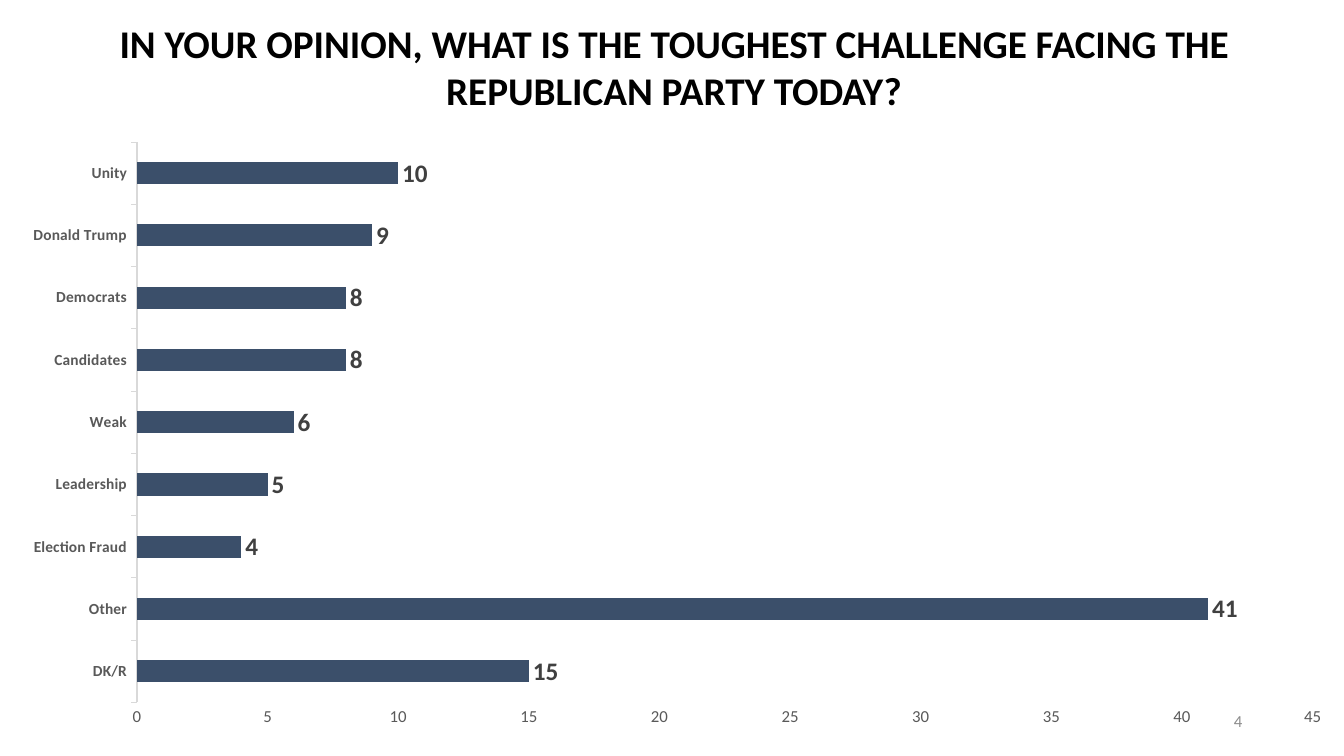
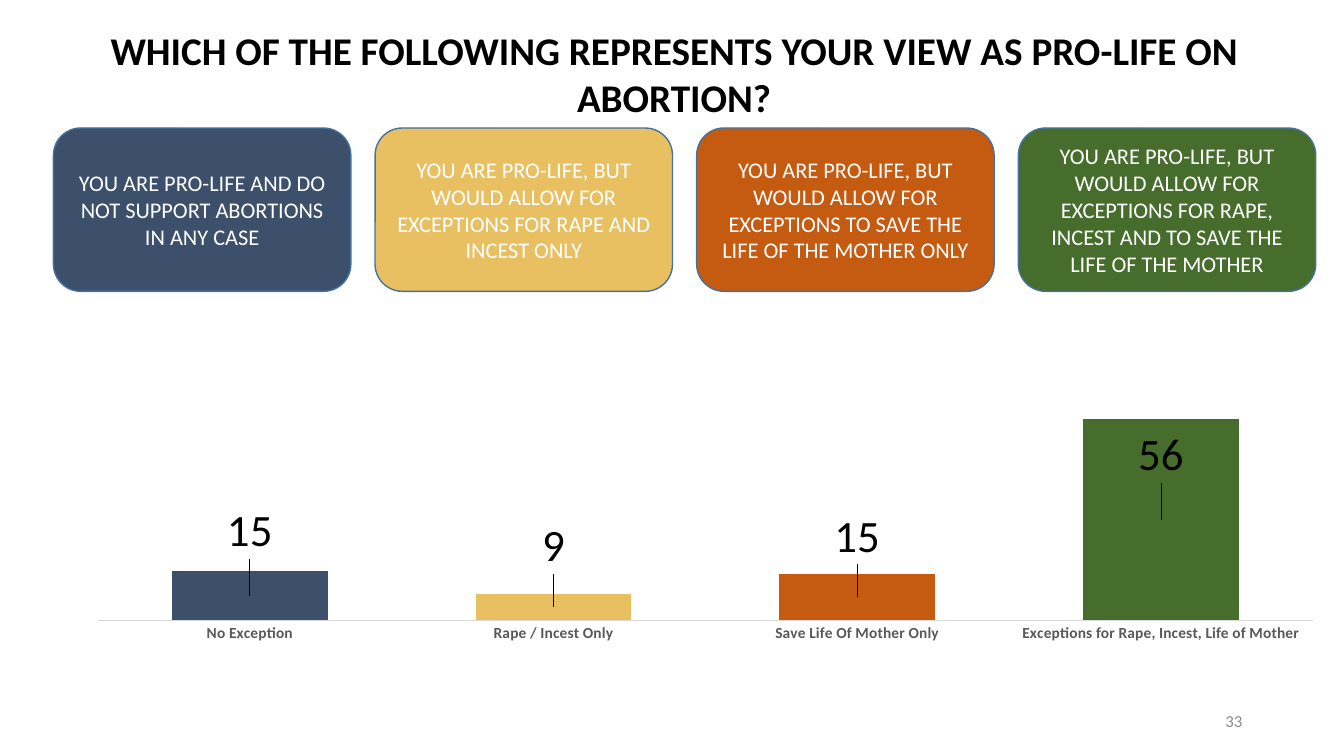
from lxml import etree
from pptx import Presentation
from pptx.chart.data import CategoryChartData
from pptx.dml.color import RGBColor
from pptx.enum import chart as ch, shapes, text
from pptx.oxml.ns import qn
from pptx.util import Inches, Pt

FONT = "Calibri"
BLACK, WHITE, GREY, DARK_GREY = "000000", "FFFFFF", "595959", "404040"
PAGE_GREY, AXIS_GREY, BOX_LINE = "8C8C8C", "D9D9D9", "43739E"

CHALLENGE_TITLE = ("IN YOUR OPINION, WHAT IS THE TOUGHEST CHALLENGE FACING "
                   "THE REPUBLICAN PARTY TODAY?")
CHALLENGE_BAR = "3B4F6A"
CHALLENGES = [  # bottom bar first
    ("DK/R", 15), ("Other", 41), ("Election Fraud", 4), ("Leadership", 5),
    ("Weak", 6), ("Candidates", 8), ("Democrats", 8), ("Donald Trump", 9),
    ("Unity", 10),
]

VIEW_TITLE = "WHICH OF THE FOLLOWING REPRESENTS YOUR VIEW AS PRO-LIFE ON ABORTION?"
VIEWS = [  # category, bar height, label shown, label shift, colour, statement
    ("No Exception", 15, "15", -0.16, "3C4F6B",
     "YOU ARE PRO-LIFE AND DO NOT SUPPORT ABORTIONS IN ANY CASE"),
    ("Rape / Incest Only", 8, "9", -0.15, "E8C062",
     "YOU ARE PRO-LIFE, BUT WOULD ALLOW FOR EXCEPTIONS FOR RAPE AND INCEST ONLY"),
    ("Save Life Of Mother Only", 14, "15", -0.15, "C55A11",
     "YOU ARE PRO-LIFE, BUT WOULD ALLOW FOR EXCEPTIONS TO SAVE THE LIFE OF "
     "THE MOTHER ONLY"),
    ("Exceptions for Rape, Incest, Life of Mother", 61, "56", -0.16, "466D2C",
     "YOU ARE PRO-LIFE, BUT WOULD ALLOW FOR EXCEPTIONS FOR RAPE, INCEST AND "
     "TO SAVE THE LIFE OF THE MOTHER"),
]
BOX_LEFT, BOX_TOP, BOX_WIDTH, BOX_HEIGHT, BOX_STEP = 0.53, 1.27, 2.95, 1.62, 3.19


def rgb(colour):
    return RGBColor.from_string(colour)


def paint(fill, colour):
    fill.solid()
    fill.fore_color.rgb = rgb(colour)


def style_font(font, size, colour, bold=False):
    font.name, font.size, font.bold = FONT, Pt(size), bold
    font.color.rgb = rgb(colour)


def write(shape, words, size, colour, align, anchor, bold=False):
    frame = shape.text_frame
    frame.word_wrap = True
    frame.vertical_anchor = anchor
    para = frame.paragraphs[0]
    para.text = words
    para.alignment = align
    style_font(para.font, size, colour, bold)


def add_page(deck, title, title_top, number):
    """Add a blank slide with the shared title and page number."""
    page = deck.slides.add_slide(deck.slide_layouts[6])
    box = page.shapes.add_textbox(Inches(0.04), Inches(title_top),
                                  Inches(13.29), Inches(1.04))
    write(box, title, 28, BLACK, text.PP_ALIGN.CENTER, text.MSO_ANCHOR.TOP, True)
    box = page.shapes.add_textbox(Inches(9.42), Inches(6.95), Inches(3), Inches(0.4))
    write(box, number, 12, PAGE_GREY, text.PP_ALIGN.RIGHT, text.MSO_ANCHOR.MIDDLE)
    return page


def make_layout(**settings):
    """Build a chart layout element from its manual settings."""
    layout = etree.Element(qn("c:layout"))
    manual = etree.SubElement(layout, qn("c:manualLayout"))
    for name, value in settings.items():
        etree.SubElement(manual, qn(f"c:{name}")).set("val", str(value))
    return layout


def set_plot_area(chart, left, top, width, height):
    area = chart.element.find(".//" + qn("c:plotArea"))
    for old in area.findall(qn("c:layout")):
        area.remove(old)
    area.insert(0, make_layout(layoutTarget="inner", xMode="edge", yMode="edge",
                               x=left, y=top, w=width, h=height))


def add_bars(page, kind, place, plot_area, rows, gap, colour, top_value):
    """Add a one-series bar chart; rows are (category, value) pairs."""
    data = CategoryChartData()
    data.categories = [name for name, _ in rows]
    data.add_series("Series 1", [value for _, value in rows])
    chart = page.shapes.add_chart(kind, *map(Inches, place), data).chart
    chart.has_title = chart.has_legend = False
    style_font(chart.font, 10, BLACK)
    set_plot_area(chart, *plot_area)

    plot = chart.plots[0]
    plot.vary_by_categories = False
    plot.gap_width = gap
    paint(plot.series[0].format.fill, colour)

    names, values = chart.category_axis, chart.value_axis
    style_font(names.tick_labels.font, 11, GREY, True)
    names.format.line.color.rgb = rgb(AXIS_GREY)
    names.format.line.width = Pt(0.75)
    names.major_tick_mark = values.major_tick_mark = ch.XL_TICK_MARK.NONE
    values.has_major_gridlines = False
    values.minimum_scale, values.maximum_scale = 0, top_value
    return chart


def show_values(series, size, colour, position, bold=False):
    labels = series.data_labels
    labels.show_value = True
    labels.position = position
    style_font(labels.font, size, colour, bold)


def add_challenge_page(deck):
    page = add_page(deck, CHALLENGE_TITLE, 0.14, "4")
    chart = add_bars(page, ch.XL_CHART_TYPE.BAR_CLUSTERED, (0, 1.3, 13.19, 6.11),
                     (0.103, 0.018, 0.884, 0.91), CHALLENGES, 182,
                     CHALLENGE_BAR, 45)
    chart.category_axis.major_tick_mark = ch.XL_TICK_MARK.OUTSIDE
    values = chart.value_axis
    values.major_unit = 5
    values.format.line.fill.background()
    style_font(values.tick_labels.font, 12, GREY)
    show_values(chart.plots[0].series[0], 18, DARK_GREY,
                ch.XL_LABEL_POSITION.OUTSIDE_END, True)


def add_view_page(deck):
    page = add_page(deck, VIEW_TITLE, 0.21, "33")
    chart = add_bars(page, ch.XL_CHART_TYPE.COLUMN_STACKED, (0, 2.73, 13.14, 3.98),
                     (0.074, 0.038, 0.917, 0.822), [view[:2] for view in VIEWS],
                     95, VIEWS[0][4], 100)
    chart.value_axis.visible = False
    chart.plots[0].overlap = 100
    series = chart.plots[0].series[0]
    show_values(series, 32, BLACK, ch.XL_LABEL_POSITION.CENTER)

    for index, (_, _, shown, shift, colour, statement) in enumerate(VIEWS):
        point = series.points[index]
        paint(point.format.fill, colour)
        label = point.data_label
        para = label.text_frame.paragraphs[0]
        span = para.add_run()
        span.text = shown
        style_font(span.font, 32, BLACK)
        label.position = ch.XL_LABEL_POSITION.CENTER
        mark = series.data_labels._element.findall(qn("c:dLbl"))[index]
        mark.insert(1, make_layout(x=0, y=shift))

        box = page.shapes.add_shape(
            shapes.MSO_SHAPE.ROUNDED_RECTANGLE,
            Inches(BOX_LEFT + index * BOX_STEP), Inches(BOX_TOP),
            Inches(BOX_WIDTH), Inches(BOX_HEIGHT))
        box.shadow.inherit = False
        paint(box.fill, colour)
        box.line.color.rgb = rgb(BOX_LINE)
        box.line.width = Pt(1)
        write(box, statement, 16, WHITE, text.PP_ALIGN.CENTER, text.MSO_ANCHOR.MIDDLE)


def main():
    deck = Presentation()
    deck.slide_width, deck.slide_height = Inches(13.33), Inches(7.5)
    add_challenge_page(deck)
    add_view_page(deck)
    deck.save("out.pptx")


if __name__ == "__main__":
    main()
